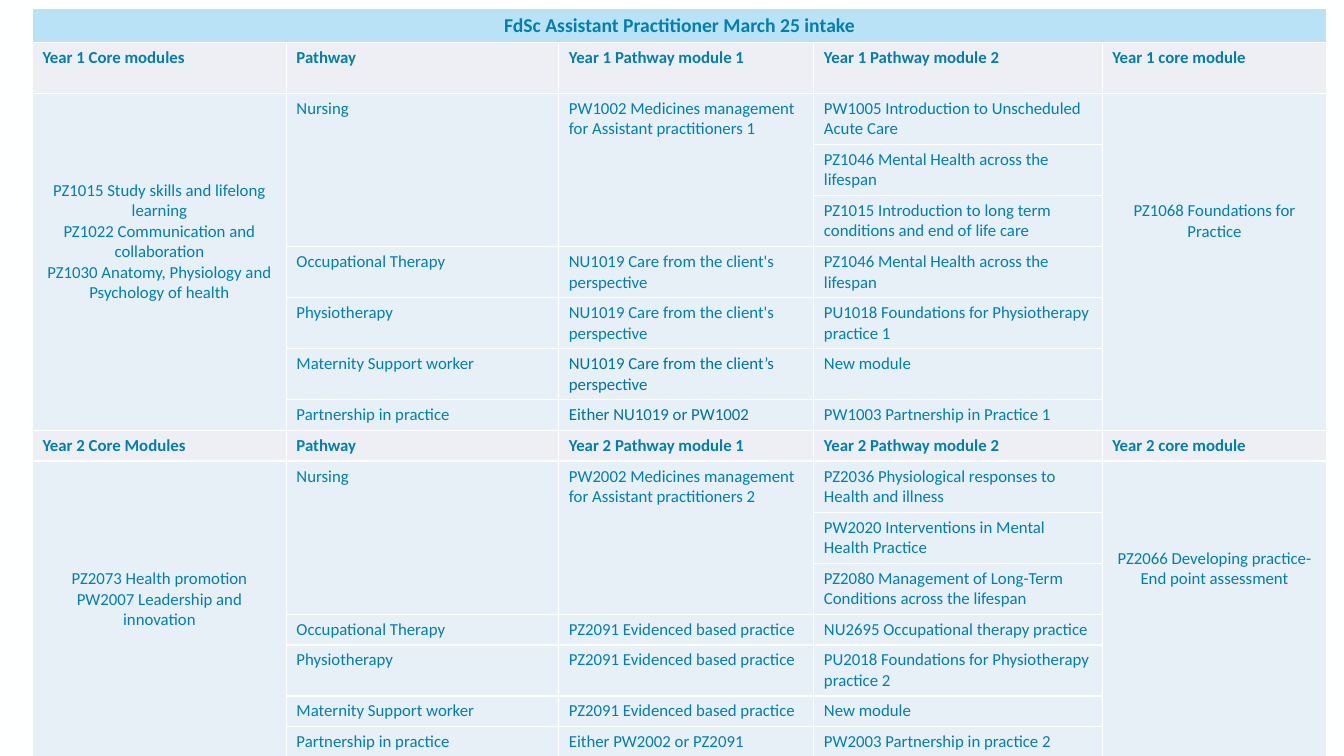
"""Build the module table for the assistant practitioner degree."""
from dataclasses import dataclass

from lxml import etree
from pptx import Presentation
from pptx.dml.color import RGBColor
from pptx.enum.text import PP_ALIGN
from pptx.oxml.ns import qn
from pptx.util import Pt

LEFT, CENTER = PP_ALIGN.LEFT, PP_ALIGN.CENTER
COLUMN_WIDTHS = (181.4, 194.6, 182.2, 206, 160.4)
TALL, SHORT, TITLE_HEIGHT = 36.4, 21.9, 24
MARGIN, LINE_HEIGHT = 3.6, 14.65
TITLE = "FdSc Assistant Practitioner March 25 intake"


@dataclass(frozen=True)
class Theme:
    """Colours, font and type sizes of the slide."""
    font: str = "Calibri"
    title_size: float = 14
    body_size: float = 12
    page: str = "FEFFFF"
    title_fill: str = "BAE2F6"
    heading_fill: str = "EEEFF4"
    body_fill: str = "E7EFF7"
    text: str = "007FB0"
    dark_text: str = "00739E"
    border: float = 1


@dataclass(frozen=True)
class Year:
    """Modules of one year, with the empty lines above the core texts."""
    headings: tuple
    core: str
    core_offset: int
    final: str
    final_offset: int
    heights: tuple
    pathways: tuple


YEARS = (
    Year(
        ("Year 1 Core modules", "Pathway", "Year 1 Pathway module 1",
         "Year 1 Pathway module 2", "Year 1 core module"),
        "PZ1015 Study skills and lifelong learning\n"
        "PZ1022 Communication and collaboration\n"
        "PZ1030 Anatomy, Physiology and Psychology of health", 4,
        "PZ1068 Foundations for Practice", 5,
        (TALL,) * 7 + (SHORT,),
        (
            ("Nursing", "PW1002 Medicines management for Assistant practitioners 1",
             ("PW1005 Introduction to Unscheduled Acute Care",
              "PZ1046 Mental Health across the lifespan",
              "PZ1015 Introduction to long term conditions and end of life care")),
            ("Occupational Therapy", "NU1019 Care from the client's perspective",
             ("PZ1046 Mental Health across the lifespan",)),
            ("Physiotherapy", "NU1019 Care from the client's perspective",
             ("PU1018 Foundations for Physiotherapy practice 1",)),
            ("Maternity Support worker", "NU1019 Care from the client’s perspective",
             ("New module",)),
            ("Partnership in practice", "Either NU1019 or PW1002",
             ("PW1003 Partnership in Practice 1",)),
        ),
    ),
    Year(
        ("Year 2 Core Modules", "Pathway", "Year 2 Pathway module 1",
         "Year 2 Pathway module 2", "Year 2 core module"),
        "PZ2073 Health promotion\nPW2007 Leadership and innovation", 5,
        "PZ2066 Developing practice- End point assessment", 4,
        (SHORT, TALL, TALL, TALL, SHORT, TALL, SHORT, SHORT),
        (
            ("Nursing", "PW2002 Medicines management for Assistant practitioners 2",
             ("PZ2036 Physiological responses to Health and illness",
              "PW2020 Interventions in Mental Health Practice",
              "PZ2080 Management of Long-Term Conditions across the lifespan")),
            ("Occupational Therapy", "PZ2091 Evidenced based practice",
             ("NU2695 Occupational therapy practice",)),
            ("Physiotherapy", "PZ2091 Evidenced based practice",
             ("PU2018 Foundations for Physiotherapy practice 2",)),
            ("Maternity Support worker", "PZ2091 Evidenced based practice",
             ("New module",)),
            ("Partnership in practice", "Either PW2002 or PZ2091",
             ("PW2003 Partnership in practice 2",)),
        ),
    ),
)
DARK_CELLS = ("NU1019 Care from the client’s perspective", "Either NU1019 or PW1002")


class ModulePage:
    """Draws the styled table on one slide."""

    def __init__(self, page, theme):
        self.page, self.theme = page, theme
        page.background.fill.solid()
        page.background.fill.fore_color.rgb = RGBColor.from_string(theme.page)

    def add_table(self, left, top, widths, heights):
        """Add an unbanded table with bordered body cells."""
        frame = self.page.shapes.add_table(
            len(heights), len(widths), Pt(left), Pt(top), Pt(sum(widths)), Pt(sum(heights)))
        self.table = frame.table
        self.table.first_row = self.table.horz_banding = False
        for column, width in zip(self.table.columns, widths):
            column.width = Pt(width)
        for row, height in zip(self.table.rows, heights):
            row.height = Pt(height)
        for cell in self.table.iter_cells():
            self.add_borders(cell)
            self.fill_cell(cell, self.theme.body_fill)

    def add_borders(self, cell):
        """Give a cell a thin line on each side."""
        properties = cell._tc.get_or_add_tcPr()
        for side in ("a:lnL", "a:lnR", "a:lnT", "a:lnB"):
            line = etree.SubElement(properties, qn(side), w=str(Pt(self.theme.border)))
            solid = etree.SubElement(line, qn("a:solidFill"))
            etree.SubElement(solid, qn("a:srgbClr"), val=self.theme.page)

    def fill_cell(self, cell, color):
        """Fill a cell with one colour."""
        cell.fill.solid()
        cell.fill.fore_color.rgb = RGBColor.from_string(color)

    def set_cell(self, row, column, text, rows=1, columns=1, align=LEFT, offset=0,
                 bold=False, size=None, fill=None):
        """Put text in a cell, merged over the given rows and columns."""
        cell = self.table.cell(row, column)
        if rows * columns > 1:
            cell.merge(self.table.cell(row + rows - 1, column + columns - 1))
        if fill:
            self.fill_cell(cell, fill)
        cell.margin_top = Pt(MARGIN + offset * LINE_HEIGHT)
        cell.text_frame.text = text
        color = self.theme.dark_text if text in DARK_CELLS else self.theme.text
        for para in cell.text_frame.paragraphs:
            para.alignment = align
            for span in para.runs:
                span.font.name = self.theme.font
                span.font.size = Pt(size or self.theme.body_size)
                span.font.bold = bold
                span.font.color.rgb = RGBColor.from_string(color)

    def add_year(self, row, year):
        """Put in the heading row and the modules of one year."""
        for column, heading in enumerate(year.headings):
            self.set_cell(row, column, heading, bold=True, fill=self.theme.heading_fill)
        body_rows = len(year.heights) - 1
        row += 1
        self.set_cell(row, 0, year.core, body_rows, align=CENTER, offset=year.core_offset)
        self.set_cell(row, 4, year.final, body_rows, align=CENTER, offset=year.final_offset)
        for pathway, first_module, second_modules in year.pathways:
            self.set_cell(row, 1, pathway, len(second_modules))
            self.set_cell(row, 2, first_module, len(second_modules))
            for module in second_modules:
                self.set_cell(row, 3, module)
                row += 1


def main():
    """Build and save the deck."""
    deck = Presentation()
    deck.slide_width, deck.slide_height = Pt(960), Pt(540)
    theme = Theme()
    page = ModulePage(deck.slides.add_slide(deck.slide_layouts[6]), theme)
    heights = [TITLE_HEIGHT] + [height for year in YEARS for height in year.heights]
    page.add_table(23.2, 6, COLUMN_WIDTHS, heights)
    page.set_cell(0, 0, TITLE, columns=len(COLUMN_WIDTHS), align=CENTER, bold=True,
                  size=theme.title_size, fill=theme.title_fill)
    row = 1
    for year in YEARS:
        page.add_year(row, year)
        row += len(year.heights)
    deck.save("out.pptx")


if __name__ == "__main__":
    main()
